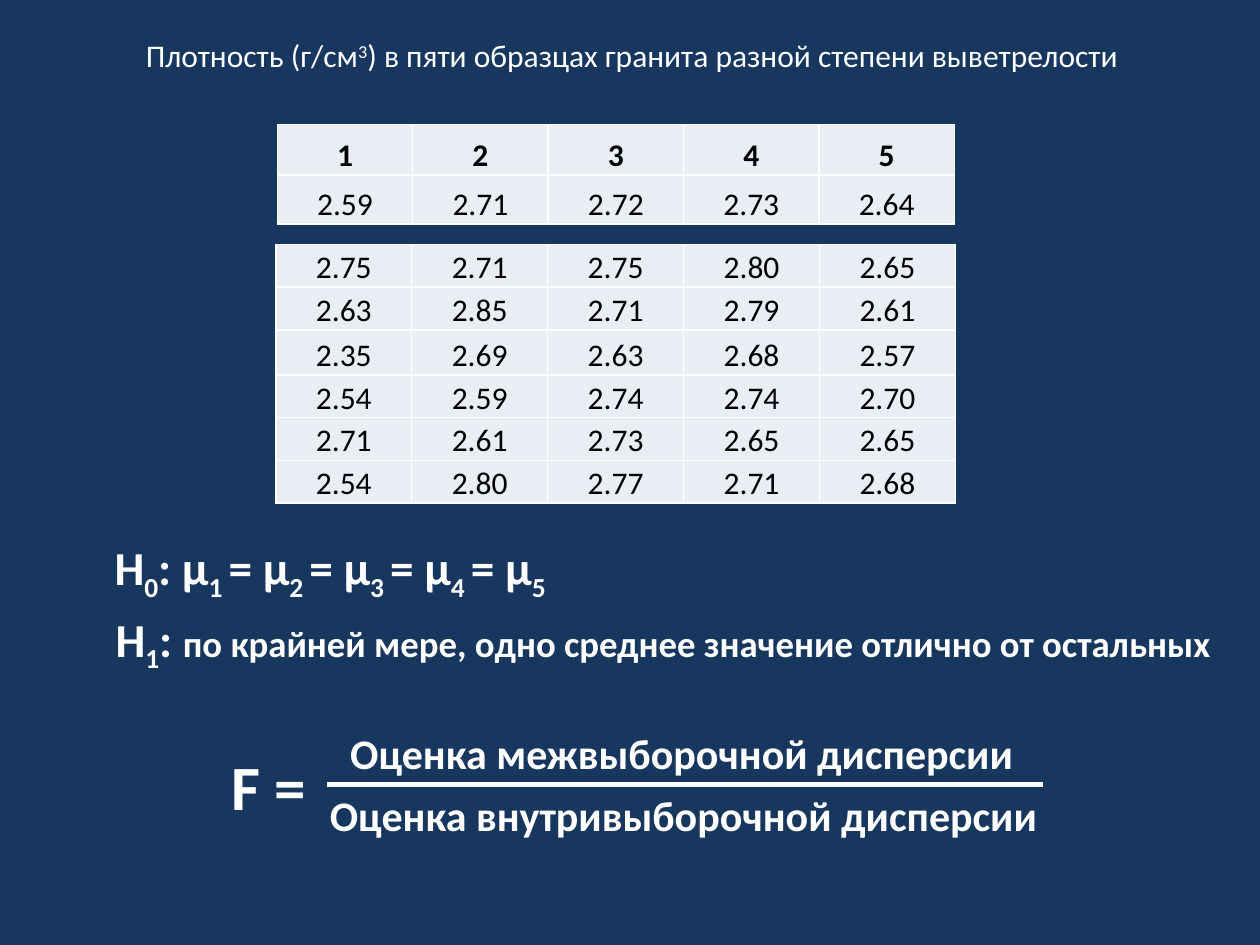
from pptx import Presentation
from pptx.dml.color import RGBColor
from pptx.enum.shapes import MSO_CONNECTOR
from pptx.enum.text import MSO_ANCHOR, MSO_AUTO_SIZE, PP_ALIGN
from pptx.oxml import parse_xml
from pptx.oxml.ns import nsdecls
from pptx.util import Cm, Pt

NAVY = RGBColor(0x17, 0x37, 0x5E)
WHITE = RGBColor(0xFF, 0xFF, 0xFF)
BLACK = RGBColor(0x00, 0x00, 0x00)
PALE = RGBColor(0xE9, 0xED, 0xF4)
FONT = "Calibri"
SUB, SUPER = -25, 30

# Content: runs are (text, format) pairs
TITLE = [("Плотность (г/см", {}), ("3", {"baseline": SUPER}),
         (") в пяти образцах гранита разной степени выветрелости", {})]

NULL_HYPOTHESIS = [("Н", {}), ("0", {"baseline": SUB}), (": μ", {})]
for number in range(1, 5):
    NULL_HYPOTHESIS += [(f"{number} ", {"baseline": SUB}), ("= μ", {})]
NULL_HYPOTHESIS.append(("5", {"baseline": SUB}))

ALTERNATIVE = [("Н", {}), ("1", {"baseline": SUB}), (": ", {}),
               ("по крайней мере, одно среднее значение отлично от остальных",
                {"size": 21})]

# Text boxes: runs, (left, top, width, height) in cm, size, bold, wrap
STATEMENTS = [
    (NULL_HYPOTHESIS, (2.06, 10.72, 10.01, 1.42), 27, True, True),
    (ALTERNATIVE, (2.08, 12.17, 23.19, 1.42), 27, True, True),
    (TITLE, (2.69, 0.61, 20.4, 1.02), 18, False, False),
]
FRACTION = [
    ([("F =", {}), (" ", {"size": 18, "bold": False})],
     (4.42, 14.94, 2.18, 1.8), 36, True, False),
    ([("Оценка межвыборочной дисперсии", {})],
     (6.81, 14.55, 14.02, 1.27), 24, True, False),
    ([("Оценка внутривыборочной дисперсии", {})],
     (6.4, 15.8, 14.91, 1.27), 24, True, False),
]
FRACTION_BAR = (21.03, 15.82, 6.6, 15.82)

# Tables: left, top, column width, row heights in cm, header flag, rows
TABLES = [
    (5.59, 2.51, 2.73, [1.02, 0.99], True, [
        ["1", "2", "3", "4", "5"],
        ["2.59", "2.71", "2.72", "2.73", "2.64"],
    ]),
    (5.56, 4.93, 2.74, [0.86, 0.86, 0.91, 0.86, 0.86, 0.86], False, [
        ["2.75", "2.71", "2.75", "2.80", "2.65"],
        ["2.63", "2.85", "2.71", "2.79", "2.61"],
        ["2.35", "2.69", "2.63", "2.68", "2.57"],
        ["2.54", "2.59", "2.74", "2.74", "2.70"],
        ["2.71", "2.61", "2.73", "2.65", "2.65"],
        ["2.54", "2.80", "2.77", "2.71", "2.68"],
    ]),
]
CELL_FORMAT = {"margin_left": Cm(0.03), "margin_right": Cm(0.03),
               "margin_top": Cm(0.03), "margin_bottom": 0,
               "vertical_anchor": MSO_ANCHOR.BOTTOM}


def add_run(paragraph, text, color, size, bold=False, baseline=0):
    run = paragraph.add_run()
    run.text = text
    for name, value in {"name": FONT, "size": Pt(size), "bold": bold}.items():
        setattr(run.font, name, value)
    run.font.color.rgb = color
    if baseline:
        run._r.get_or_add_rPr().set("baseline", str(baseline * 1000))


def add_text(shapes, runs, box, size, bold, wrap):
    frame = shapes.add_textbox(*map(Cm, box)).text_frame
    frame.word_wrap = wrap
    frame.auto_size = MSO_AUTO_SIZE.SHAPE_TO_FIT_TEXT
    for text, changes in runs:
        add_run(frame.paragraphs[0], text, WHITE,
                **{"size": size, "bold": bold, **changes})


def add_borders(cell):
    properties = cell._tc.get_or_add_tcPr()
    for side in ("lnL", "lnR", "lnT", "lnB"):
        properties.append(parse_xml(
            f'<a:{side} {nsdecls("a")} w="{Pt(1)}"><a:solidFill>'
            f'<a:srgbClr val="{WHITE}"/></a:solidFill></a:{side}>'))


def add_table(shapes, left, top, column_width, heights, has_header, rows):
    columns = len(rows[0])
    table = shapes.add_table(len(rows), columns, Cm(left), Cm(top),
                             Cm(column_width * columns), Cm(sum(heights))).table
    table.first_row = has_header
    table.horz_banding = False
    for column in table.columns:
        column.width = Cm(column_width)
    for i, (height, values) in enumerate(zip(heights, rows)):
        table.rows[i].height = Cm(height)
        for j, value in enumerate(values):
            cell = table.cell(i, j)
            for name, setting in CELL_FORMAT.items():
                setattr(cell, name, setting)
            add_borders(cell)
            cell.fill.solid()
            cell.fill.fore_color.rgb = PALE
            paragraph = cell.text_frame.paragraphs[0]
            paragraph.alignment = PP_ALIGN.CENTER
            add_run(paragraph, value, BLACK, 18, bold=has_header and i == 0)


def main():
    presentation = Presentation()
    presentation.slide_width, presentation.slide_height = Cm(25.4), Cm(19.05)
    slide = presentation.slides.add_slide(presentation.slide_layouts[6])
    slide.background.fill.solid()
    slide.background.fill.fore_color.rgb = NAVY

    # Title and hypotheses
    for statement in STATEMENTS:
        add_text(slide.shapes, *statement)

    # F ratio, kept together as a group
    group = slide.shapes.add_group_shape()
    for part in FRACTION:
        add_text(group.shapes, *part)
    bar = group.shapes.add_connector(MSO_CONNECTOR.STRAIGHT,
                                     *map(Cm, FRACTION_BAR))
    bar.line.color.rgb = WHITE
    bar.line.width = Pt(2.75)
    bar._element.spPr.append(parse_xml(f'<a:effectLst {nsdecls("a")}/>'))

    # Density measurements
    for table in TABLES:
        add_table(slide.shapes, *table)

    presentation.save("out.pptx")


if __name__ == "__main__":
    main()
